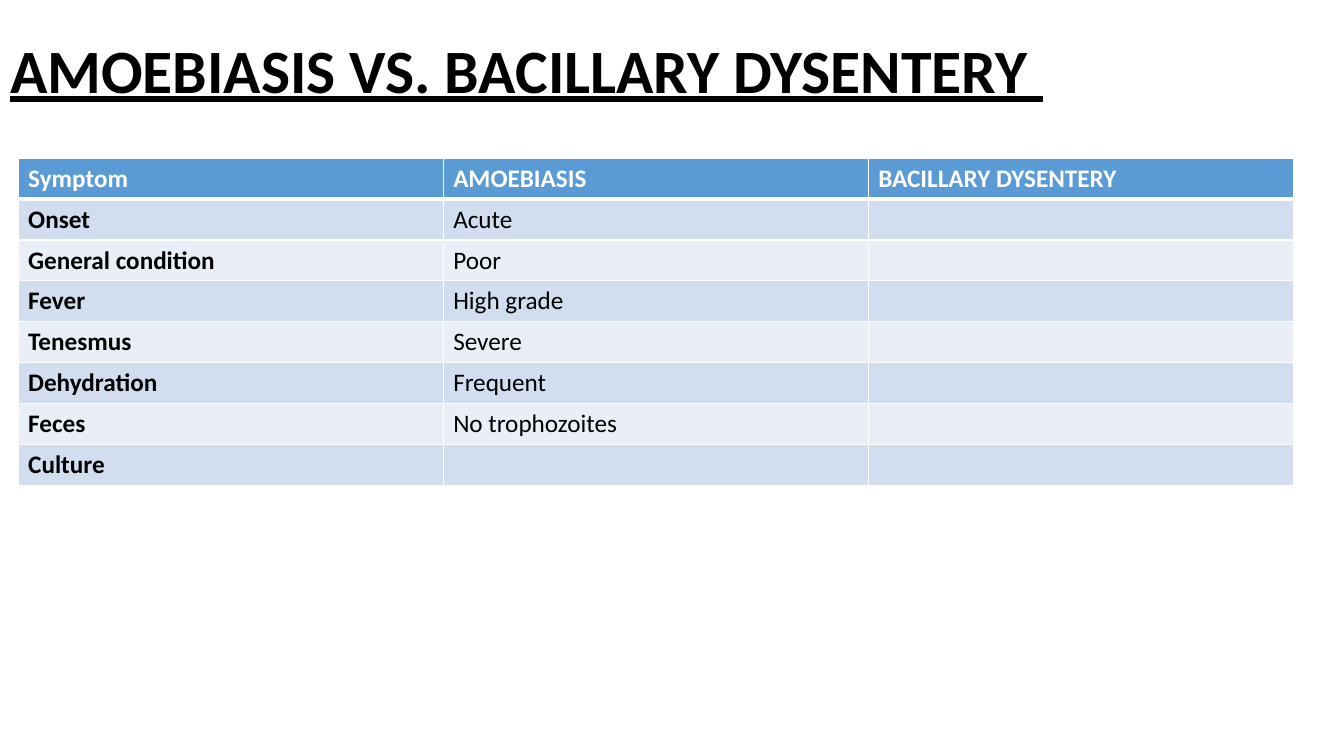
from lxml.etree import SubElement
from pptx import Presentation
from pptx.dml.color import RGBColor
from pptx.enum.text import MSO_ANCHOR, PP_ALIGN
from pptx.oxml.ns import qn
from pptx.util import Inches, Pt

W, H = Inches(13.333), Inches(7.5)
FONT = "Calibri"
BLACK, WHITE = "000000", "FFFFFF"
HEADER_FILL = "5B9BD5"
BAND_FILLS = ("D2DEEF", "EAEFF7")
ROW_H = Inches(0.405)

ROWS = [
    ("Symptom", "AMOEBIASIS", "BACILLARY DYSENTERY"),
    ("Onset", "Acute", ""),
    ("General condition", "Poor", ""),
    ("Fever", "High grade", ""),
    ("Tenesmus", "Severe", ""),
    ("Dehydration", "Frequent", ""),
    ("Feces", "No trophozoites", ""),
    ("Culture", "", ""),
]


def rgb(color):
    return RGBColor.from_string(color)


def add_run(p, text, size, color, bold=False, underline=False):
    r = p.add_run()
    r.text = text
    r.font.name = FONT
    r.font.size = Pt(size)
    r.font.color.rgb = rgb(color)
    r.font.bold = bold
    r.font.underline = underline


def set_title(s, text):
    sp = s.shapes.title
    sp.left, sp.top, sp.width, sp.height = 0, 0, W, Inches(1.45)
    tf = sp.text_frame
    tf.word_wrap = True
    tf.vertical_anchor = MSO_ANCHOR.MIDDLE
    p = tf.paragraphs[0]
    p.alignment = PP_ALIGN.LEFT
    p.line_spacing = 0.9
    add_run(p, text, 44, BLACK, bold=True, underline=True)


def set_borders(cell, color, **widths):
    tc_pr = cell._tc.get_or_add_tcPr()
    for side in "LRTB":
        ln = SubElement(tc_pr, qn(f"a:ln{side}"), w=str(Pt(widths.get(side, 1))))
        fill = SubElement(ln, qn("a:solidFill"))
        SubElement(fill, qn("a:srgbClr"), val=color)


def fill_cell(cell, text, row, col):
    header = row == 0
    # Borders come before the fill in the cell properties
    heavy = {"B": 3} if header else {"T": 3} if row == 1 else {}
    set_borders(cell, WHITE, **heavy)
    cell.fill.solid()
    cell.fill.fore_color.rgb = rgb(HEADER_FILL if header else BAND_FILLS[(row - 1) % 2])
    if text:
        add_run(cell.text_frame.paragraphs[0], text, 18,
                WHITE if header else BLACK, bold=header or col == 0)


def add_comparison(s, rows, left, top, width):
    n_cols = len(rows[0])
    table = s.shapes.add_table(len(rows), n_cols, left, top, width,
                               ROW_H * len(rows)).table
    for column in table.columns:
        column.width = width // n_cols
    for i, texts in enumerate(rows):
        table.rows[i].height = ROW_H
        for j, text in enumerate(texts):
            fill_cell(table.cell(i, j), text, i, j)


def main():
    prs = Presentation()
    prs.slide_width, prs.slide_height = W, H
    s = prs.slides.add_slide(prs.slide_layouts[5])

    # Heading
    set_title(s, "AMOEBIASIS VS. BACILLARY DYSENTERY ")

    # Symptom table
    add_comparison(s, ROWS, Inches(0.18), Inches(1.57), Inches(12.65))

    prs.save("out.pptx")


if __name__ == "__main__":
    main()
